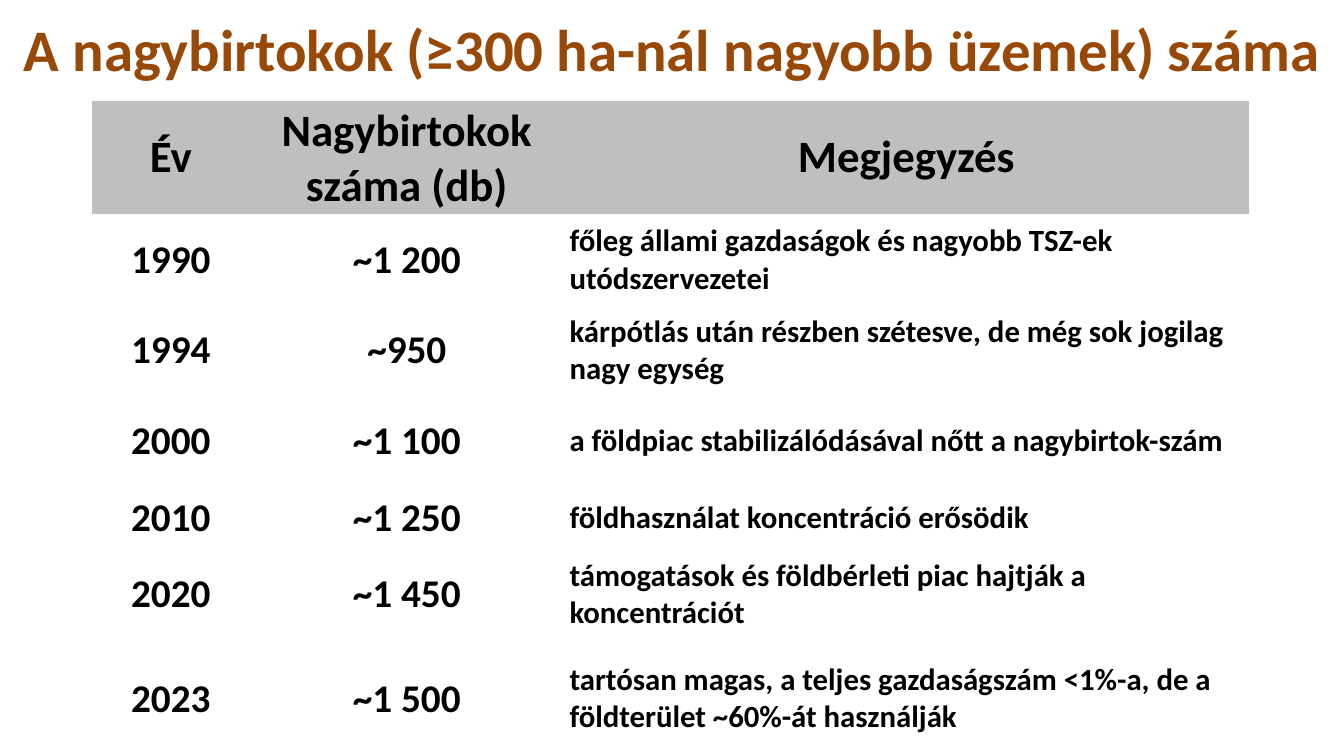
from dataclasses import dataclass

from pptx import Presentation
from pptx.dml.color import RGBColor
from pptx.enum.text import MSO_ANCHOR, PP_ALIGN
from pptx.oxml.ns import qn
from pptx.util import Inches, Pt


@dataclass(frozen=True)
class Theme:
    font: str = "Calibri"
    title_color: str = "984807"
    text_color: str = "000000"
    header_fill: str = "BFBFBF"
    title_size: int = 42
    header_size: int = 32
    figure_size: int = 28
    remark_size: int = 22


THEME = Theme()
PLAIN_TABLE_STYLE = "{2D5ABB26-0587-4C30-8999-92F81FD0307C}"
TITLE = "A nagybirtokok (≥300 ha-nál nagyobb üzemek) száma"
HEADERS = ("Év", "Nagybirtokok\nszáma (db)", "Megjegyzés")
ESTATES = (
    ("1990", "~1 200", "főleg állami gazdaságok és nagyobb TSZ-ek utódszervezetei"),
    ("1994", "~950", "kárpótlás után részben szétesve, de még sok jogilag nagy egység"),
    ("2000", "~1 100", "a földpiac stabilizálódásával nőtt a nagybirtok-szám"),
    ("2010", "~1 250", "földhasználat koncentráció erősödik"),
    ("2020", "~1 450", "támogatások és földbérleti piac hajtják a koncentrációt"),
    ("2023", "~1 500", "tartósan magas, a teljes gazdaságszám <1%-a, de a földterület ~60%-át használják"),
)
COLUMN_WIDTHS = (1.57, 3.11, 6.8)
ROW_HEIGHTS = (1.11, 0.9, 0.9, 0.9, 0.62, 0.9, 1.17)


def write(tf, content, *, size, color=THEME.text_color, align=PP_ALIGN.CENTER):
    tf.text = content
    tf.word_wrap = True
    for p in tf.paragraphs:
        p.alignment = align
        for r in p.runs:
            r.font.name = THEME.font
            r.font.size = Pt(size)
            r.font.bold = True
            r.font.color.rgb = RGBColor.from_string(color)


def set_margins(box, horizontal, vertical):
    box.margin_left = box.margin_right = Inches(horizontal)
    box.margin_top = box.margin_bottom = Inches(vertical)


def add_title(s):
    sp = s.shapes.add_textbox(Inches(0), Inches(0.02), Inches(13.33), Inches(0.91))
    tf = sp.text_frame
    write(tf, TITLE, size=THEME.title_size, color=THEME.title_color)
    tf.vertical_anchor = MSO_ANCHOR.MIDDLE
    set_margins(tf, 0.13, 0.07)


def fill_cell(cell, content, *, fill=None, **text_format):
    write(cell.text_frame, content, **text_format)
    cell.vertical_anchor = MSO_ANCHOR.MIDDLE
    set_margins(cell, 0.06, 0.03)
    if fill:
        cell.fill.solid()
        cell.fill.fore_color.rgb = RGBColor.from_string(fill)
    else:
        cell.fill.background()


def add_estate_table(s):
    frame = s.shapes.add_table(
        len(ROW_HEIGHTS), len(COLUMN_WIDTHS),
        Inches(0.91), Inches(1), Inches(sum(COLUMN_WIDTHS)), Inches(sum(ROW_HEIGHTS)),
    )
    table = frame.table
    table.horz_banding = False
    next(frame.element.iter(qn("a:tableStyleId"))).text = PLAIN_TABLE_STYLE
    for column, width in zip(table.columns, COLUMN_WIDTHS):
        column.width = Inches(width)
    for row, height in zip(table.rows, ROW_HEIGHTS):
        row.height = Inches(height)

    for i, header in enumerate(HEADERS):
        fill_cell(table.cell(0, i), header, fill=THEME.header_fill, size=THEME.header_size)
    for i, (year, count, remark) in enumerate(ESTATES, start=1):
        fill_cell(table.cell(i, 0), year, size=THEME.figure_size)
        fill_cell(table.cell(i, 1), count, size=THEME.figure_size)
        fill_cell(table.cell(i, 2), remark, size=THEME.remark_size, align=PP_ALIGN.LEFT)


def main():
    prs = Presentation()
    prs.slide_width = Inches(13.33)
    prs.slide_height = Inches(7.5)
    s = prs.slides.add_slide(prs.slide_layouts[6])
    add_title(s)
    add_estate_table(s)
    prs.save("out.pptx")


if __name__ == "__main__":
    main()
